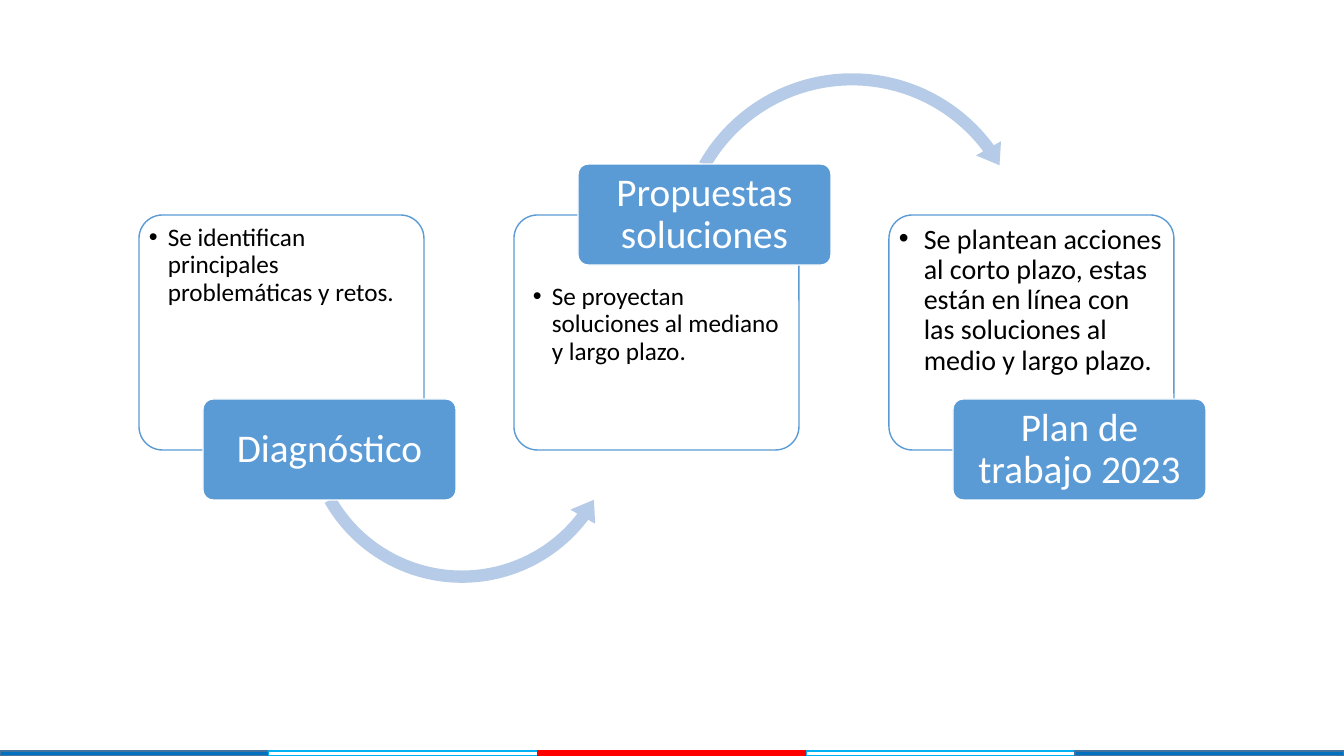
from lxml.etree import SubElement
from pptx import Presentation
from pptx.dml.color import RGBColor
from pptx.enum.shapes import MSO_SHAPE as Shape
from pptx.enum.text import MSO_ANCHOR as Anchor, PP_ALIGN as Align
from pptx.oxml.ns import qn
from pptx.util import Pt

SLIDE_WIDTH, SLIDE_HEIGHT = 1344, 756
EMU_PER_PX = 914400 / 100.8
BLUE, PALE_BLUE, WHITE, BLACK = "5B9BD5", "B5CBE7", "FFFFFF", "000000"
CARD_LEFT, CARD_TOP, CARD_PITCH = 139, 215, 375
CARD_WIDTH, CARD_HEIGHT = 285, 235
LABEL_OFFSET, LABEL_WIDTH, LABEL_HEIGHT = 64, 253, 101

STRIPES = [
    ("0070C0", "43739E"),
    (WHITE, "00B0F0"),
    ("FF0000", "FF0000"),
    (WHITE, "00B0F0"),
    ("0070C0", "43739E"),
]
STEPS = [
    {
        "label": "Diagnóstico",
        "label_top": 399,
        "text": "Se identifican principales problemáticas y retos.",
        "size": 18, "indent": 19, "side": 3, "top": 3,
        "arrow": (Shape.LEFT_CIRCULAR_ARROW, 296, 259, 332,
                  (0.037, 4.574, 22.329, 90.245, 0.043)),
    },
    {
        "label": "Propuestas soluciones",
        "label_top": 164,
        "text": "Se proyectan soluciones al mediano y largo plazo.",
        "size": 18, "indent": 19, "side": 12, "top": 62,
        "arrow": (Shape.CIRCULAR_ARROW, 668, 65, 368,
                  (0.033, 4.086, 194.159, 125.755, 0.039)),
    },
    {
        "label": "Plan de trabajo 2023",
        "label_top": 399,
        "text": "Se plantean acciones al corto plazo, estas están en línea "
                "con las soluciones al medio y largo plazo.",
        "size": 20, "indent": 25, "side": 3, "top": 3,
        "arrow": None,
    },
]


def px(length):
    return round(length * EMU_PER_PX)


def color(value):
    return RGBColor.from_string(value)


def add_box(page, kind, left, top, width, height, fill, line=None):
    box = page.shapes.add_shape(kind, px(left), px(top), px(width), px(height))
    box.shadow.inherit = False
    box.fill.solid()
    box.fill.fore_color.rgb = color(fill)
    if line:
        box.line.color.rgb = color(line)
        box.line.width = Pt(1)
    else:
        box.line.fill.background()
    return box


def write_text(box, text, size, ink, align, anchor, side, top):
    frame = box.text_frame
    frame.word_wrap = True
    frame.vertical_anchor = anchor
    frame.margin_left = frame.margin_right = px(side)
    frame.margin_top = frame.margin_bottom = px(top)
    frame.text = text
    para = frame.paragraphs[0]
    para.alignment = align
    para.line_spacing = 0.9
    for span in para.runs:
        span.font.name = "Calibri"
        span.font.size = Pt(size)
        span.font.color.rgb = color(ink)
    return para


def add_bullet(para, indent):
    properties = para._p.get_or_add_pPr()
    properties.set("marL", str(px(indent)))
    properties.set("indent", str(-px(indent)))
    SubElement(properties, qn("a:buFont"), typeface="Arial")
    SubElement(properties, qn("a:buChar"), char="•")


def add_card(page, left, step):
    card = add_box(page, Shape.ROUNDED_RECTANGLE, left, CARD_TOP,
                   CARD_WIDTH, CARD_HEIGHT, WHITE, BLUE)
    card.adjustments[0] = 0.1
    fill = card._element.spPr.find(qn("a:solidFill"))
    SubElement(fill[0], qn("a:alpha"), val="90000")
    para = write_text(card, step["text"], step["size"], BLACK, Align.LEFT,
                      Anchor.TOP, step["side"], step["top"])
    add_bullet(para, step["indent"])


def add_arrow(page, kind, left, top, size, adjustments):
    arrow = add_box(page, kind, left, top, size, size, PALE_BLUE)
    for index, value in enumerate(adjustments):
        arrow.adjustments[index] = value


def add_label(page, left, step):
    label = add_box(page, Shape.ROUNDED_RECTANGLE, left, step["label_top"],
                    LABEL_WIDTH, LABEL_HEIGHT, BLUE, WHITE)
    label.adjustments[0] = 0.1
    write_text(label, step["label"], 28, WHITE, Align.CENTER,
               Anchor.MIDDLE, 6, 4)


def add_stripes(page):
    width = SLIDE_WIDTH / len(STRIPES)
    for index, (fill, line) in enumerate(STRIPES):
        add_box(page, Shape.RECTANGLE, index * width, SLIDE_HEIGHT - 5,
                width, 5, fill, line)


def main():
    deck = Presentation()
    deck.slide_width, deck.slide_height = px(SLIDE_WIDTH), px(SLIDE_HEIGHT)
    page = deck.slides.add_slide(deck.slide_layouts[6])
    add_stripes(page)
    for index, step in enumerate(STEPS):
        left = CARD_LEFT + index * CARD_PITCH
        add_card(page, left, step)
        if step["arrow"]:
            add_arrow(page, *step["arrow"])
        add_label(page, left + LABEL_OFFSET, step)
    deck.save("out.pptx")


if __name__ == "__main__":
    main()
